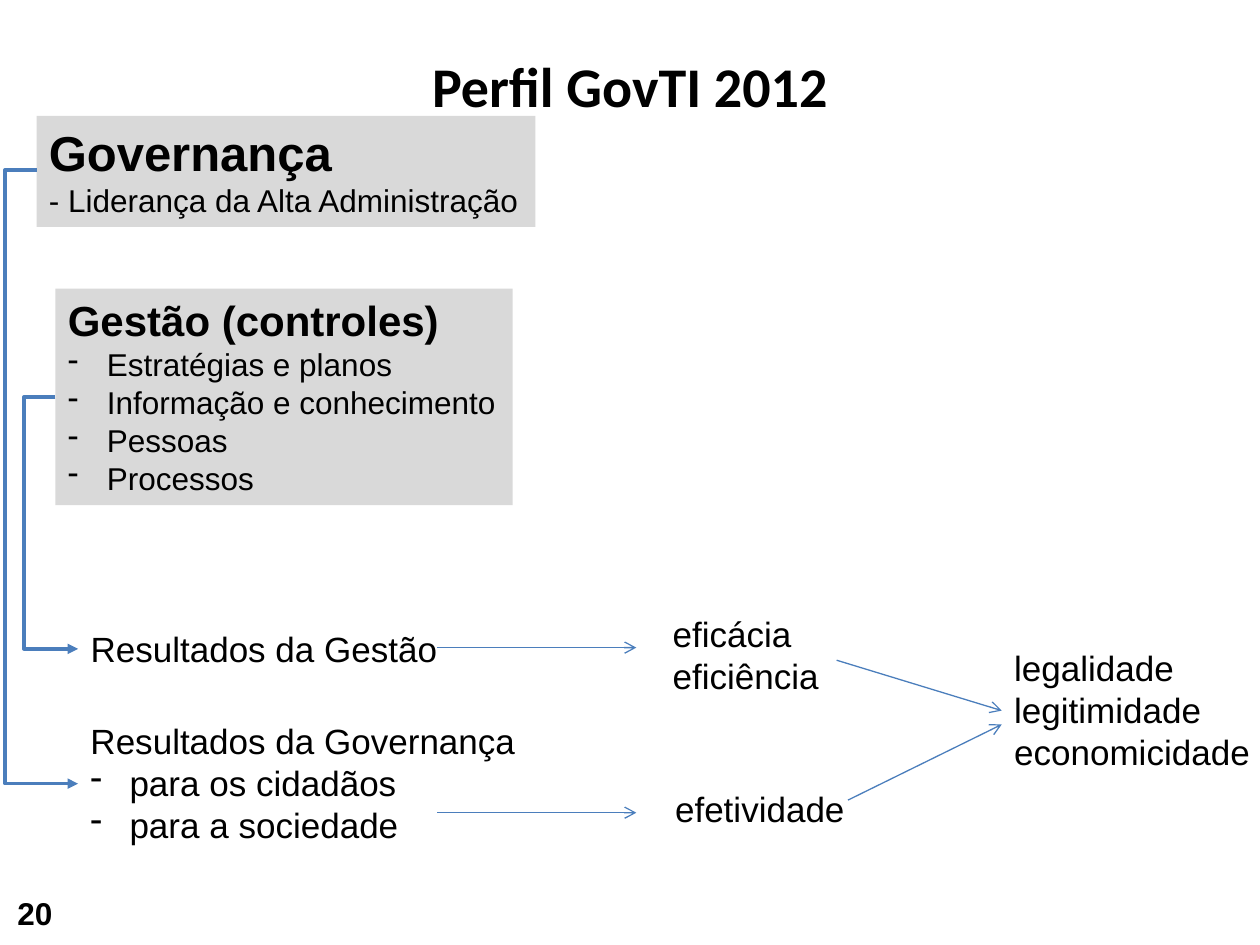
from lxml import etree
from pptx import Presentation
from pptx.dml.color import RGBColor
from pptx.enum import shapes, text
from pptx.oxml import ns
from pptx.util import Inches, Pt

COLORS = {"text": "000000", "panel": "D9D9D9", "line": "4B7EBC"}
INDENT = Inches(0.31)


def write(frame, lines, font="Arial", wrap=False):
    """Fill a frame with (text, size, bold, dashed) lines."""
    frame.word_wrap = wrap
    frame.vertical_anchor = text.MSO_ANCHOR.TOP
    for i, (words, size, bold, dashed) in enumerate(lines):
        paragraph = frame.paragraphs[0] if i == 0 else frame.add_paragraph()
        paragraph.alignment = text.PP_ALIGN.LEFT
        if dashed:
            props = paragraph._p.get_or_add_pPr()
            props.set("marL", str(INDENT))
            props.set("indent", str(-INDENT))
            etree.SubElement(props, ns.qn("a:buFontTx"))
            etree.SubElement(props, ns.qn("a:buChar"), char="-")
        run = paragraph.add_run()
        run.text = words
        run.font.name = font
        run.font.size = Pt(size)
        run.font.bold = bold
        run.font.color.rgb = RGBColor.from_string(COLORS["text"])


def connect(kind, start, end, width, head):
    connector = slide.shapes.add_connector(kind, *map(Inches, start + end))
    connector.line.color.rgb = RGBColor.from_string(COLORS["line"])
    connector.line.width = Pt(width)
    etree.SubElement(connector.line._get_or_add_ln(), ns.qn("a:tailEnd"), type=head)
    etree.SubElement(connector._element.spPr, ns.qn("a:effectLst"))
    return connector


prs = Presentation()
prs.slide_width, prs.slide_height = Inches(10), Inches(7.5)
slide = prs.slides.add_slide(prs.slide_layouts[5])

title = slide.shapes.title
title.left, title.top, title.width, title.height = map(Inches, (0, 0.36, 10, 0.79))
write(title.text_frame, [("Perfil GovTI 2012", 32, True, False)], "Calibri", wrap=True)
title.text_frame.paragraphs[0].alignment = text.PP_ALIGN.CENTER

panels = [
    ((0.29, 0.92, 3.96, 0.88), [
        ("Governança", 28, True, False),
        ("- Liderança da Alta Administração", 18, False, False),
    ]),
    ((0.44, 2.29, 3.63, 1.72), [
        ("Gestão (controles)", 24, True, False),
        ("Estratégias e planos", 18, False, True),
        ("Informação e conhecimento", 18, False, True),
        ("Pessoas", 18, False, True),
        ("Processos", 18, False, True),
    ]),
]
for place, lines in panels:
    panel = slide.shapes.add_shape(shapes.MSO_SHAPE.RECTANGLE, *map(Inches, place))
    panel.shadow.inherit = False
    panel.fill.solid()
    panel.fill.fore_color.rgb = RGBColor.from_string(COLORS["panel"])
    panel.line.fill.background()
    write(panel.text_frame, lines)

# A leading dash marks a bulleted line
results = [
    ((0.62, 4.93, 2.98, 0.44), ["Resultados da Gestão"]),
    ((0.62, 5.66, 3.6, 1.11),
     ["Resultados da Governança", "-para os cidadãos", "-para a sociedade"]),
    ((5.24, 4.81, 1.37, 0.77), ["eficácia", "eficiência"]),
    ((5.26, 6.2, 1.56, 0.44), ["efetividade"]),
    ((7.95, 5.08, 2.09, 1.11), ["legalidade", "legitimidade", "economicidade"]),
]
for place, lines in results:
    result = slide.shapes.add_textbox(*map(Inches, place))
    write(result.text_frame,
          [(line.lstrip("-"), 20, False, line.startswith("-")) for line in lines])

page_number = slide.shapes.add_textbox(*map(Inches, (0.04, 7.05, 0.88, 0.4)))
write(page_number.text_frame, [("20", 18, True, False)], wrap=True)

# Each bracket runs left from its panel to bend_x, down, and right to its results
for start, end, bend_x in [
    ((0.29, 1.35), (0.62, 6.22), 0.04),
    ((0.44, 3.15), (0.62, 5.15), 0.19),
]:
    bracket = connect(shapes.MSO_CONNECTOR.ELBOW, start, end, 2, "triangle")
    bend = round((bend_x - start[0]) / (end[0] - start[0]) * 100000)
    geometry = bracket._element.spPr.find(ns.qn("a:prstGeom"))
    guides = geometry.find(ns.qn("a:avLst"))
    etree.SubElement(guides, ns.qn("a:gd"), name="adj1", fmla=f"val {bend}")

for start, end in [
    ((3.47, 5.14), (5.05, 5.14)),
    ((3.47, 6.45), (5.05, 6.45)),
    ((6.64, 5.24), (7.95, 5.64)),
    ((6.73, 6.35), (7.95, 5.75)),
]:
    connect(shapes.MSO_CONNECTOR.STRAIGHT, start, end, 0.75, "arrow")

prs.save("out.pptx")
